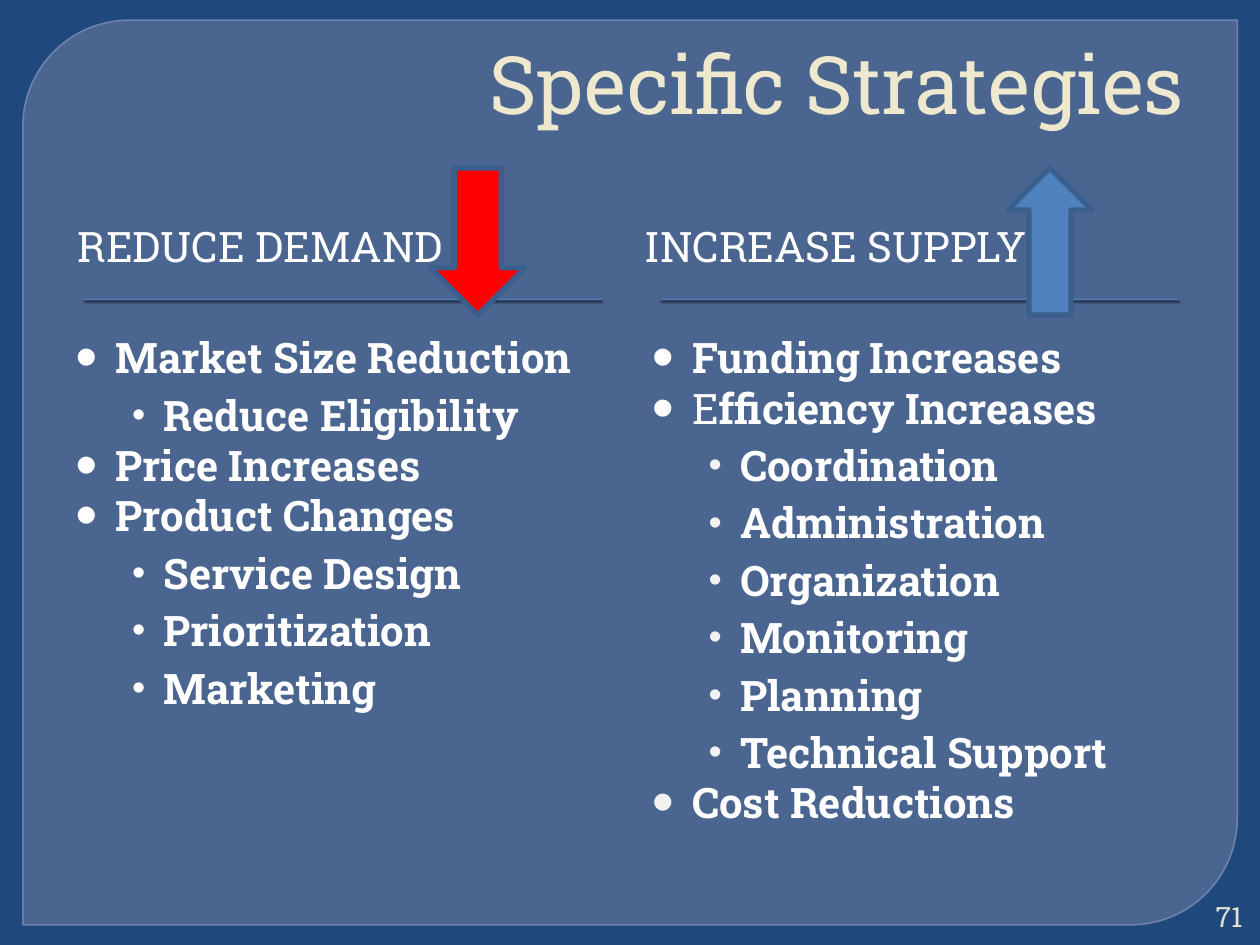
from lxml.etree import SubElement
from pptx import Presentation
from pptx.dml.color import RGBColor
from pptx.enum.shapes import MSO_SHAPE as Shape
from pptx.enum.text import MSO_ANCHOR as Anchor, PP_ALIGN as Align
from pptx.oxml import parse_xml
from pptx.oxml.ns import nsdecls, qn
from pptx.util import Pt

FONT = "Roboto Slab"
COLORS = {
    "background": "1F497D", "panel": "63759D", "panel_line": "7989B3",
    "title": "EDE8CE", "text": "FFFFFF", "soft_bullet": "F2F2F2",
    "number": "E3E1D7", "blue": "4F81BD", "red": "FF0000", "arrow_line": "3A5F8C",
}

presentation = Presentation()
presentation.slide_width, presentation.slide_height = Pt(720), Pt(540)
slide = presentation.slides.add_slide(presentation.slide_layouts[6])
slide.background.fill.solid()
slide.background.fill.fore_color.rgb = RGBColor.from_string(COLORS["background"])


def add_filled(kind, box, fill, line=None, width=0):
    shape = slide.shapes.add_shape(kind, *map(Pt, box))
    shape.shadow.inherit = False
    shape.fill.solid()
    shape.fill.fore_color.rgb = RGBColor.from_string(COLORS[fill])
    if line:
        shape.line.color.rgb = RGBColor.from_string(COLORS[line])
        shape.line.width = Pt(width)
    else:
        shape.line.fill.background()
    return shape


def add_text(box, lines, size, color, anchor, align=Align.LEFT):
    text_frame = slide.shapes.add_textbox(*map(Pt, box)).text_frame
    text_frame.word_wrap = True
    text_frame.vertical_anchor = anchor
    text_frame.text = "\n".join(lines)
    for paragraph in text_frame.paragraphs:
        paragraph.alignment = align
        font = paragraph.runs[0].font
        font.name, font.size = FONT, Pt(size)
        font.color.rgb = RGBColor.from_string(COLORS[color])
    return text_frame


panel = add_filled(Shape.ROUND_2_DIAG_RECTANGLE, (13, 11.5, 694, 517), "panel", "panel_line", 0.87)
panel.adjustments[0], panel.adjustments[1] = 0.118, 0
for fill, alpha in ((panel.fill, 65000), (panel.line.fill, 88000)):
    color_element = fill._xPr.find(".//" + qn("a:srgbClr"))
    SubElement(color_element, qn("a:alpha"), val=str(alpha))

for left in (48.25, 378):
    rule = add_filled(Shape.RECTANGLE, (left, 170.65, 295.5, 0.7), "blue")
    effects = rule._element.spPr.find(qn("a:effectLst"))
    effects.append(parse_xml(
        f'<a:outerShdw {nsdecls("a")} blurRad="12700" dist="12700" dir="5400000">'
        '<a:srgbClr val="000000"><a:alpha val="75000"/></a:srgbClr></a:outerShdw>'))

add_text((36, 0, 648, 78), ["Specific Strategies"], 46, "title", Anchor.BOTTOM, Align.RIGHT)

columns = [
    ("REDUCE DEMAND", 30, 36, "text", [
        (0, "Market Size Reduction"), (1, "Reduce Eligibility"),
        (0, "Price Increases"), (0, "Product Changes"),
        (1, "Service Design"), (1, "Prioritization"), (1, "Marketing")]),
    ("INCREASE SUPPLY", 354, 365.5, "soft_bullet", [
        (0, "Funding Increases"), (0, "Efficiency Increases"),
        (1, "Coordination"), (1, "Administration"), (1, "Organization"),
        (1, "Monitoring"), (1, "Planning"), (1, "Technical Support"),
        (0, "Cost Reductions")]),
]
levels = [(23, -23, 0, 150), (50.4, -18, 4, 90)]

for heading, heading_left, list_left, bullet_color, items in columns:
    heading_frame = add_text((heading_left, 108, 318, 50.4), [heading], 24, "text", Anchor.BOTTOM)
    heading_frame.paragraphs[0]._p.get_or_add_pPr().set("marL", str(Pt(7.2)))
    list_frame = add_text((list_left, 186, 318, 310), [text for _, text in items], 24, "text", Anchor.TOP)
    for index, (paragraph, (level, _)) in enumerate(zip(list_frame.paragraphs, items)):
        margin, indent, space, bullet_size = levels[level]
        paragraph.level = level
        paragraph.space_before = Pt(space)
        paragraph.runs[0].font.bold = True
        properties = paragraph._p.get_or_add_pPr()
        properties.set("marL", str(Pt(margin)))
        properties.set("indent", str(Pt(indent)))
        bullet = SubElement(properties, qn("a:buClr"))
        SubElement(bullet, qn("a:srgbClr"), val=COLORS["text" if index < 2 else bullet_color])
        SubElement(properties, qn("a:buSzPct"), val=str(bullet_size * 1000))
        SubElement(properties, qn("a:buFont"), typeface="Arial")
        SubElement(properties, qn("a:buChar"), char="•")

efficiency = list_frame.paragraphs[1]
first_letter = efficiency.runs[0]
remainder = efficiency.add_run()
first_letter.text, remainder.text = "E", "fficiency Increases"
first_letter.font.bold = False
remainder.font.name, remainder.font.size, remainder.font.bold = FONT, Pt(24), True
remainder.font.color.rgb = RGBColor.from_string(COLORS["text"])

add_text((680.4, 512.65, 36.7, 21.6), ["71"], 16, "number", Anchor.MIDDLE, Align.RIGHT)

add_filled(Shape.UP_ARROW, (576, 96, 48, 84), "blue", "arrow_line", 3)
demand_arrow = add_filled(Shape.UP_ARROW, (246, 96, 54, 84), "red", "arrow_line", 3)
demand_arrow.rotation = 180

presentation.save("out.pptx")
